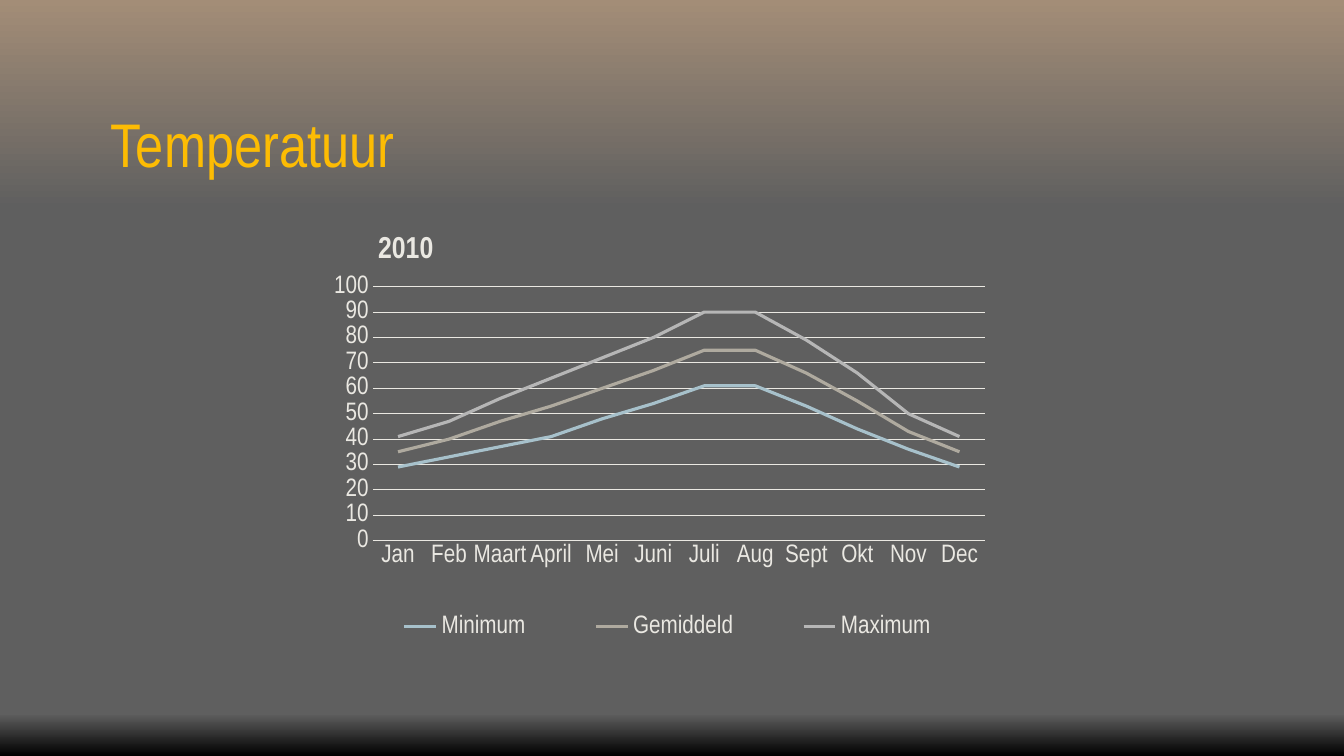
from dataclasses import dataclass

from lxml import etree
from pptx import Presentation
from pptx.chart.chart import Chart
from pptx.chart.data import CategoryChartData
from pptx.dml.color import RGBColor
from pptx.enum.chart import XL_CHART_TYPE, XL_LEGEND_POSITION, XL_TICK_MARK
from pptx.enum.shapes import MSO_SHAPE
from pptx.enum.text import MSO_ANCHOR
from pptx.oxml import parse_xml
from pptx.oxml.ns import nsdecls, qn
from pptx.slide import Slide
from pptx.util import Inches, Pt

LINE_CHART = XL_CHART_TYPE.LINE
LEGEND_BOTTOM = XL_LEGEND_POSITION.BOTTOM
NO_TICK = XL_TICK_MARK.NONE
RECTANGLE = MSO_SHAPE.RECTANGLE
ANCHOR_BOTTOM = MSO_ANCHOR.BOTTOM
DOWNWARD_ANGLE = 270
SLIDE_WIDTH = 13.33
SLIDE_HEIGHT = 7.5
MONTHS = ("Jan", "Feb", "Maart", "April", "Mei", "Juni",
          "Juli", "Aug", "Sept", "Okt", "Nov", "Dec")


@dataclass(frozen=True)
class Theme:
    font: str = "Arial Narrow"
    background: str = "5F5F5F"
    sand: str = "A38D77"
    black: str = "000000"
    title: str = "FDBC03"
    chart_text: str = "EAE8E2"
    title_size: float = 44
    chart_size: float = 18
    chart_title_size: float = 21.6
    series_width: float = 2.25
    grid_width: float = 0.75


@dataclass(frozen=True)
class Band:
    top: float
    height: float
    start: str
    end: str


@dataclass(frozen=True)
class Temperature:
    name: str
    values: tuple[int, ...]
    color: str


THEME = Theme()
BANDS = (
    Band(0, 2.08, THEME.sand, THEME.background),
    Band(7.08, 0.42, THEME.background, THEME.black),
)
TEMPERATURES = (
    Temperature("Minimum", (29, 33, 37, 41, 48, 54, 61, 61, 53, 44, 36, 29), "A7C1CB"),
    Temperature("Gemiddeld", (35, 40, 47, 53, 60, 67, 75, 75, 66, 55, 43, 35), "AFAA9F"),
    Temperature("Maximum", (41, 47, 56, 64, 72, 80, 90, 90, 79, 66, 50, 41), "B6B6B6"),
)


def rgb(color: str) -> RGBColor:
    return RGBColor.from_string(color)


def add_band(slide: Slide, band: Band) -> None:
    shape = slide.shapes.add_shape(
        RECTANGLE, 0, Inches(band.top), Inches(SLIDE_WIDTH), Inches(band.height))
    shape.shadow.inherit = False
    shape.line.fill.background()
    shape.fill.gradient()
    shape.fill.gradient_angle = DOWNWARD_ANGLE
    for stop, color in zip(shape.fill.gradient_stops, (band.start, band.end)):
        stop.color.rgb = rgb(color)


def add_title(slide: Slide, text: str) -> None:
    box = slide.shapes.add_textbox(Inches(1), Inches(0.58), Inches(11.33), Inches(1.25))
    frame = box.text_frame
    frame.word_wrap = True
    frame.vertical_anchor = ANCHOR_BOTTOM
    frame.text = text
    font = frame.paragraphs[0].runs[0].font
    font.size = Pt(THEME.title_size)
    font.color.rgb = rgb(THEME.title)
    shadow = parse_xml(
        f'<a:effectLst {nsdecls("a")}><a:outerShdw blurRad="38100" dist="38100" dir="2700000">'
        f'<a:srgbClr val="{THEME.black}"/></a:outerShdw></a:effectLst>')
    font.fill._xPr.append(shadow)
    font.name = THEME.font


def place(element: etree.ElementBase, **fractions: float) -> None:
    """Give a chart title, legend or plot area a fixed place within the chart."""
    for old in element.findall(qn("c:layout")):
        element.remove(old)
    inner = '<c:layoutTarget val="inner"/>' if element.tag == qn("c:plotArea") else ""
    modes = "".join(f'<c:{axis}Mode val="edge"/>' for axis in "xy")
    sizes = "".join(f'<c:{key} val="{value}"/>' for key, value in fractions.items())
    layout = parse_xml(
        f'<c:layout {nsdecls("c")}><c:manualLayout>{inner}{modes}{sizes}'
        '</c:manualLayout></c:layout>')
    previous = element.find(qn("c:tx"))
    if previous is None:
        previous = element.find(qn("c:legendPos"))
    if previous is None:
        element.insert(0, layout)
    else:
        previous.addnext(layout)


def style_chart(chart: Chart) -> None:
    chart.font.name = THEME.font
    chart.font.size = Pt(THEME.chart_size)
    chart.font.color.rgb = rgb(THEME.chart_text)

    chart.has_title = True
    chart.chart_title.include_in_layout = False
    title_frame = chart.chart_title.text_frame
    title_frame.text = "2010"
    title_font = title_frame.paragraphs[0].runs[0].font
    title_font.name = THEME.font
    title_font.size = Pt(THEME.chart_title_size)
    title_font.bold = True
    title_font.color.rgb = rgb(THEME.chart_text)

    chart.has_legend = True
    chart.legend.position = LEGEND_BOTTOM
    chart.legend.include_in_layout = False

    values = chart.value_axis
    values.minimum_scale, values.maximum_scale, values.major_unit = 0, 100, 10
    values.has_major_gridlines = True
    values.format.line.fill.background()
    for axis in (chart.category_axis, values):
        axis.major_tick_mark = NO_TICK
        axis.minor_tick_mark = NO_TICK
    for line in (values.major_gridlines.format.line, chart.category_axis.format.line):
        line.color.rgb = rgb(THEME.chart_text)
        line.width = Pt(THEME.grid_width)

    chart.plots[0].vary_by_categories = False
    for series, temperature in zip(chart.plots[0].series, TEMPERATURES):
        series.smooth = False
        series.format.line.color.rgb = rgb(temperature.color)
        series.format.line.width = Pt(THEME.series_width)

    place(chart.chart_title._element, x=0.17, y=0.02)
    place(chart.legend._element, x=0.13, y=0.85, w=0.86, h=0.1)
    place(chart.plots[0]._element.getparent(), x=0.17, y=0.15, w=0.81, h=0.56)


def add_temperature_chart(slide: Slide) -> None:
    data = CategoryChartData(number_format="General")
    data.categories = MONTHS
    for temperature in TEMPERATURES:
        data.add_series(temperature.name, temperature.values)
    frame = slide.shapes.add_chart(
        LINE_CHART, Inches(2.42), Inches(2.17), Inches(7.5), Inches(4.5), data)
    style_chart(frame.chart)


def main() -> None:
    presentation = Presentation()
    presentation.slide_width = Inches(SLIDE_WIDTH)
    presentation.slide_height = Inches(SLIDE_HEIGHT)
    slide = presentation.slides.add_slide(presentation.slide_layouts[6])
    slide.background.fill.solid()
    slide.background.fill.fore_color.rgb = rgb(THEME.background)
    for band in BANDS:
        add_band(slide, band)
    add_title(slide, "Temperatuur")
    add_temperature_chart(slide)
    presentation.save("out.pptx")


if __name__ == "__main__":
    main()
